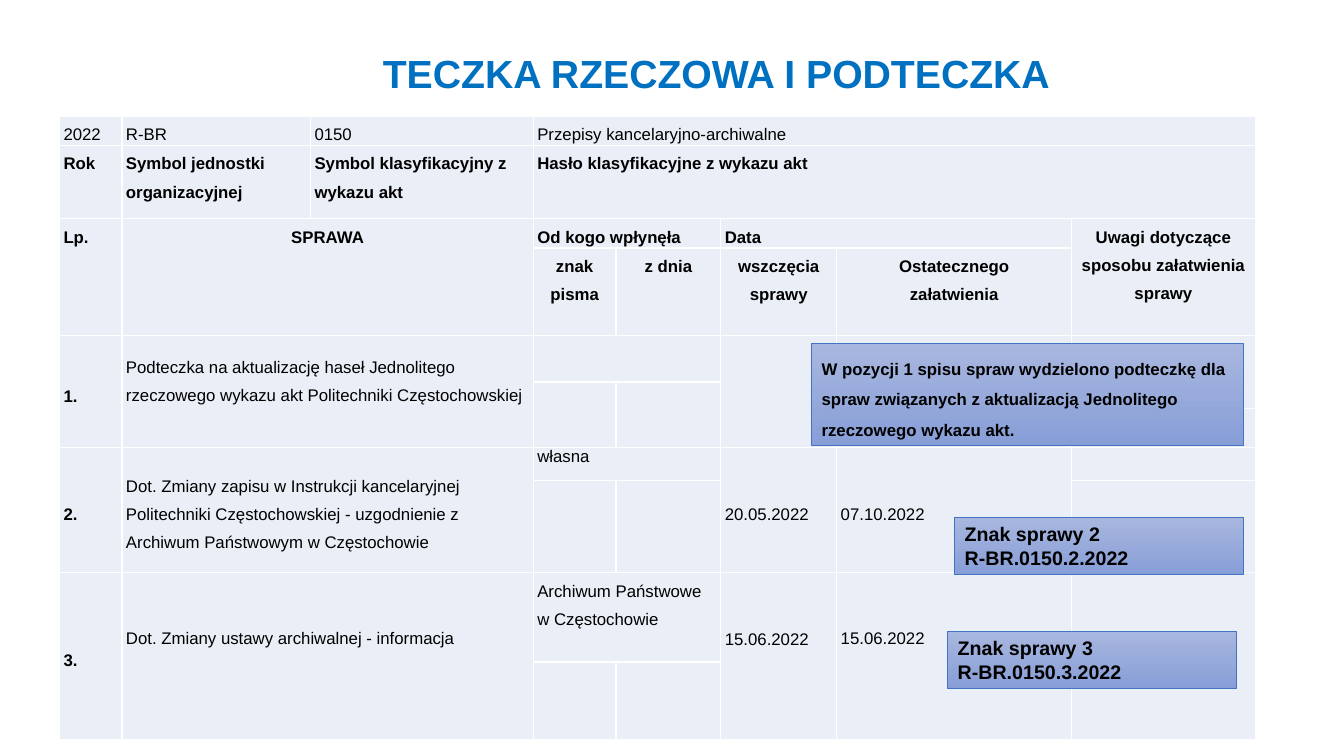
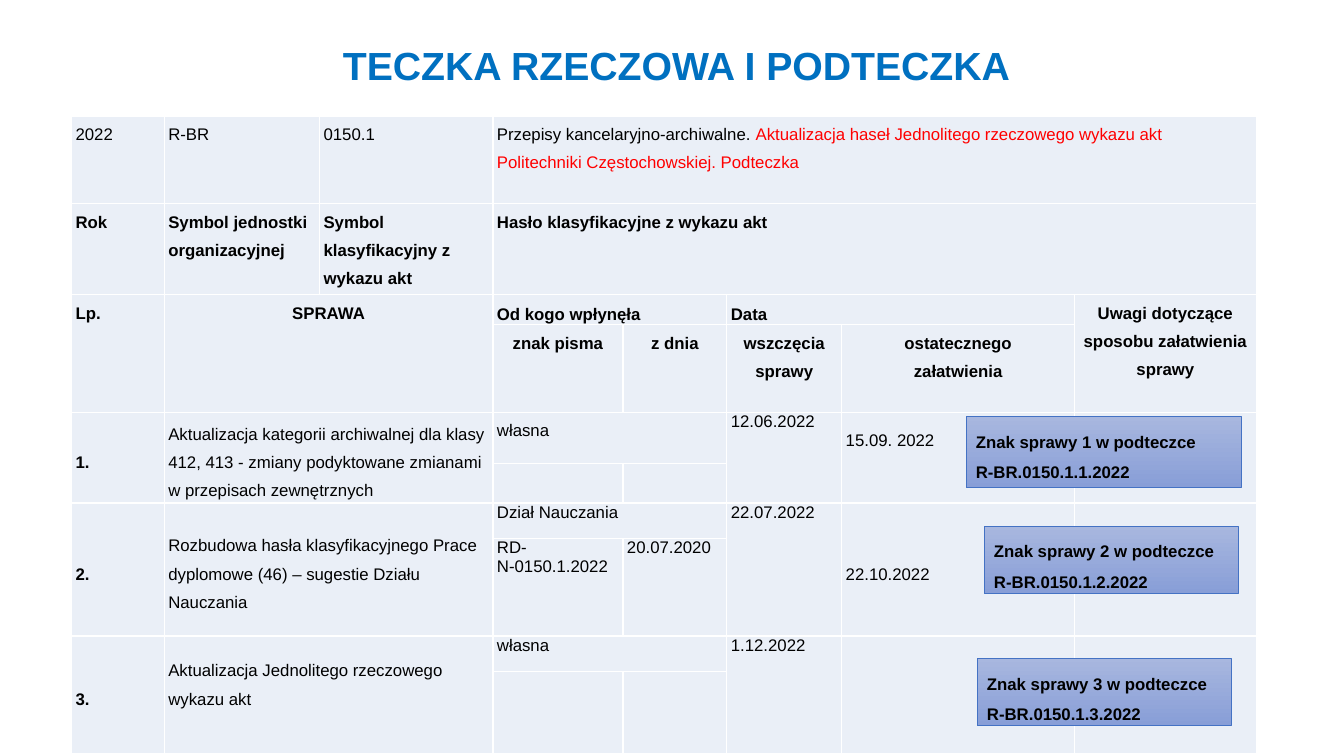
from lxml import etree
from pptx import Presentation
from pptx.dml.color import RGBColor
from pptx.enum.text import MSO_ANCHOR, PP_ALIGN
from pptx.enum.shapes import MSO_SHAPE
from pptx.oxml.ns import qn
from pptx.util import Inches, Pt

TOP, MIDDLE = MSO_ANCHOR.TOP, MSO_ANCHOR.MIDDLE
CENTER, LEFT = PP_ALIGN.CENTER, PP_ALIGN.LEFT
RECTANGLE = MSO_SHAPE.RECTANGLE

COLORS = {
    "title": "0070C0", "text": "000000", "accent": "FF0000", "cell": "EAEFF7",
    "callout_top": "A8B7DF", "callout_bottom": "889ED7", "callout_line": "4472C4",
}
FONT = "Arial"
TITLE = "TECZKA RZECZOWA I PODTECZKA"

# Cell formats: paragraph settings, bold, anchor, extra inner margins
BASE = {"alignment": LEFT, "line_spacing": 1.5, "space_after": Pt(0),
        "bold": False, "anchor": TOP, "top": 0, "bottom": 0}
STYLES = {
    "plain": {},
    "head": {"bold": True},
    "head_center": {"bold": True, "alignment": CENTER},
    "head_middle": {"bold": True, "anchor": MIDDLE},
    "number": {"bold": True, "anchor": MIDDLE, "space_after": Pt(10)},
    "middle": {"anchor": MIDDLE},
    "raised": {"anchor": MIDDLE, "bottom": 0.29},
    "raised_more": {"anchor": MIDDLE, "bottom": 0.43},
    "single": {"line_spacing": 1.0},
    "lowered": {"line_spacing": 1.0, "top": 0.57},
}

# Cases: first row, row count, rows of the first remarks cell, then texts with styles
FOLDERS = [
    {
        "title": {"box": (3.52, 0.21, 7.17, 0.72), "line_spacing": 1.5},
        "origin": (0.59, 1.15),
        "columns": [0.62, 1.87, 2.21, 0.82, 1.04, 1.15, 2.33, 1.82],
        "rows": [0.29, 0.73, 0.29, 0.87, 0.46, 0.26, 0.39, 0.33, 0.91, 0.89, 0.77],
        "symbol": "0150", "entry": "Przepisy kancelaryjno-archiwalne", "entry_accent": "",
        "closing": "Ostatecznego\nzałatwienia",
        "cases": [
            {"row": 4, "rows": 3, "remark_rows": 2,
             "subject": ("Podteczka na aktualizację haseł Jednolitego rzeczowego "
                         "wykazu akt Politechniki Częstochowskiej", "raised")},
            {"row": 7, "rows": 2, "remark_rows": 1,
             "subject": ("Dot. Zmiany zapisu w Instrukcji kancelaryjnej Politechniki "
                         "Częstochowskiej - uzgodnienie z Archiwum Państwowym "
                         "w Częstochowie", "middle"),
             "sender": ("własna", "single"),
             "opened": ("20.05.2022", "lowered"), "closed": ("07.10.2022", "middle")},
            {"row": 9, "rows": 2, "remark_rows": 2,
             "subject": ("Dot. Zmiany ustawy archiwalnej - informacja", "raised_more"),
             "sender": ("Archiwum Państwowe w Częstochowie", "plain"),
             "opened": ("15.06.2022", "lowered"), "closed": ("15.06.2022", "raised_more")},
        ],
        "callouts": [
            ((9.47, 5.13, 2.86, 0.57), "Znak sprawy 2\nR-BR.0150.2.2022", 14, 1.0),
            ((9.4, 6.26, 2.86, 0.57), "Znak sprawy 3\nR-BR.0150.3.2022", 14, 1.0),
            ((8.05, 3.41, 4.28, 1.01),
             "W pozycji 1 spisu spraw wydzielono podteczkę dla spraw związanych "
             "z aktualizacją Jednolitego rzeczowego wykazu akt.", 12, 1.5),
        ],
    },
    {
        "title": {"box": (2.81, 0.36, 7.8, 0.57), "line_spacing": 1.0},
        "origin": (0.71, 1.15),
        "columns": [0.92, 1.54, 1.72, 1.29, 1.03, 1.14, 2.31, 1.8],
        "rows": [0.87, 0.87, 0.29, 0.87, 0.51, 0.36, 0.35, 0.97, 0.35, 0.82],
        "symbol": "0150.1", "entry": "Przepisy kancelaryjno-archiwalne. ",
        "entry_accent": "Aktualizacja haseł Jednolitego rzeczowego wykazu akt "
                        "Politechniki Częstochowskiej. Podteczka",
        "closing": "ostatecznego\nzałatwienia",
        "cases": [
            {"row": 4, "rows": 2, "remark_rows": 2,
             "subject": ("Aktualizacja kategorii archiwalnej dla klasy 412, 413 - zmiany "
                         "podyktowane zmianami w przepisach zewnętrznych", "middle"),
             "sender": ("własna", "plain"),
             "opened": ("12.06.2022", "single"), "closed": ("15.09. 2022", "raised_more")},
            {"row": 6, "rows": 2, "remark_rows": 2,
             "subject": ("Rozbudowa hasła klasyfikacyjnego Prace dyplomowe (46) – "
                         "sugestie Działu Nauczania", "middle"),
             "sender": ("Dział Nauczania", "single"),
             "letter": ("RD-N-0150.1.2022", "single"), "dated": ("20.07.2020", "single"),
             "opened": ("22.07.2022", "single"), "closed": ("22.10.2022", "middle")},
            {"row": 8, "rows": 2, "remark_rows": 2,
             "subject": ("Aktualizacja Jednolitego rzeczowego wykazu akt", "raised"),
             "sender": ("własna", "single"), "opened": ("1.12.2022", "single")},
        ],
        "callouts": [
            ((9.58, 4.13, 2.73, 0.71),
             "Znak sprawy 1 w podteczce\nR-BR.0150.1.1.2022", 12, 1.5),
            ((9.76, 5.22, 2.52, 0.67),
             "Znak sprawy 2 w podteczce\nR-BR.0150.1.2.2022", 12, 1.5),
            ((9.69, 6.53, 2.52, 0.67),
             "Znak sprawy 3 w podteczce\nR-BR.0150.1.3.2022", 12, 1.5),
        ],
    },
]


def rgb(name):
    return RGBColor.from_string(COLORS[name])


def apply(target, values):
    for key, value in values.items():
        setattr(target, key, value)


def add_run(paragraph, text, size, color, bold):
    run = paragraph.add_run()
    run.text = text
    apply(run.font, {"name": FONT, "size": Pt(size), "bold": bold})
    run.font.color.rgb = rgb(color)


def write(frame, text, size, color="text", bold=True, **paragraph_format):
    for i, line in enumerate(text.split("\n")):
        paragraph = frame.add_paragraph() if i else frame.paragraphs[0]
        apply(paragraph, paragraph_format)
        add_run(paragraph, line, size, color, bold)


def header_cells(folder):
    """Cells as row, column, row span, column span, text, style."""
    return [
        (0, 0, 1, 1, "2022", "plain"),
        (0, 1, 1, 1, "R-BR", "plain"),
        (0, 2, 1, 1, folder["symbol"], "plain"),
        (0, 3, 1, 5, folder["entry"], "plain"),
        (1, 0, 1, 1, "Rok", "head"),
        (1, 1, 1, 1, "Symbol jednostki organizacyjnej", "head"),
        (1, 2, 1, 1, "Symbol klasyfikacyjny z wykazu akt", "head"),
        (1, 3, 1, 5, "Hasło klasyfikacyjne z wykazu akt", "head"),
        (2, 0, 2, 1, "Lp.", "head"),
        (2, 1, 2, 2, "SPRAWA", "head_center"),
        (2, 3, 1, 2, "Od kogo wpłynęła", "head_middle"),
        (2, 5, 1, 2, "Data", "head_middle"),
        (2, 7, 2, 1, "Uwagi dotyczące sposobu załatwienia sprawy", "head_center"),
        (3, 3, 1, 1, "znak pisma", "head_center"),
        (3, 4, 1, 1, "z dnia", "head_center"),
        (3, 5, 1, 1, "wszczęcia sprawy", "head_center"),
        (3, 6, 1, 1, folder["closing"], "head_center"),
    ]


def case_cells(number, case):
    row, rows = case["row"], case["rows"]
    places = [
        ("subject", row, 1, rows, 2),
        ("sender", row, 3, 1, 2),
        ("letter", row + 1, 3, rows - 1, 1),
        ("dated", row + 1, 4, rows - 1, 1),
        ("opened", row, 5, rows, 1),
        ("closed", row, 6, rows, 1),
        ("remarks", row, 7, case["remark_rows"], 1),
    ]
    cells = [(row, 0, rows, 1, f"{number}.", "number")]
    return cells + [(*place, *case.get(field, ("", "plain"))) for field, *place in places]


def add_register(slide, folder):
    columns, rows = folder["columns"], folder["rows"]
    left, top = folder["origin"]
    table = slide.shapes.add_table(
        len(rows), len(columns), Inches(left), Inches(top),
        Inches(sum(columns)), Inches(sum(rows))).table
    apply(table, {"first_row": False, "horz_banding": False})
    for column, width in zip(table.columns, columns):
        column.width = Inches(width)
    for row, height in zip(table.rows, rows):
        row.height = Inches(height)
    for cell in table.iter_cells():
        cell.fill.solid()
        cell.fill.fore_color.rgb = rgb("cell")
        apply(cell, {"margin_left": Inches(0.04), "margin_right": Inches(0.04),
                     "margin_top": 0, "margin_bottom": 0})

    cells = header_cells(folder)
    for number, case in enumerate(folder["cases"], 1):
        cells += case_cells(number, case)
    for row, column, row_span, column_span, text, style in cells:
        cell = table.cell(row, column)
        if row_span * column_span > 1:
            cell.merge(table.cell(row + row_span - 1, column + column_span - 1))
        look = {**BASE, **STYLES[style]}
        apply(cell, {"vertical_anchor": look.pop("anchor"),
                     "margin_top": Inches(look.pop("top")),
                     "margin_bottom": Inches(look.pop("bottom"))})
        if text:
            write(cell.text_frame, text, 12, **look)
        else:
            # Keep empty cells from stretching their rows
            etree.SubElement(cell.text_frame.paragraphs[0]._p, qn("a:endParaRPr"), sz="1200")
    if folder["entry_accent"]:
        entry = table.cell(0, 3).text_frame.paragraphs[0]
        add_run(entry, folder["entry_accent"], 12, "accent", False)


def add_title(slide, box, line_spacing):
    frame = slide.shapes.add_textbox(*map(Inches, box)).text_frame
    frame.word_wrap = True
    write(frame, TITLE, 28, "title", alignment=CENTER, line_spacing=line_spacing)


def add_callout(slide, box, text, size, line_spacing):
    callout = slide.shapes.add_shape(RECTANGLE, *map(Inches, box))
    callout.shadow.inherit = False
    callout.fill.gradient()
    callout.fill.gradient_angle = 270
    for stop, position, color in zip(callout.fill.gradient_stops, (0, 1),
                                     ("callout_top", "callout_bottom")):
        stop.position = position
        stop.color.rgb = rgb(color)
    callout.line.color.rgb = rgb("callout_line")
    callout.line.width = Pt(0.5)
    apply(callout.text_frame, {"word_wrap": True, "vertical_anchor": TOP})
    write(callout.text_frame, text, size, alignment=LEFT, line_spacing=line_spacing)


def main():
    deck = Presentation()
    apply(deck, {"slide_width": Inches(13.33), "slide_height": Inches(7.5)})
    for folder in FOLDERS:
        slide = deck.slides.add_slide(deck.slide_layouts[6])
        add_register(slide, folder)
        add_title(slide, **folder["title"])
        for callout in folder["callouts"]:
            add_callout(slide, *callout)
    deck.save("out.pptx")


if __name__ == "__main__":
    main()
